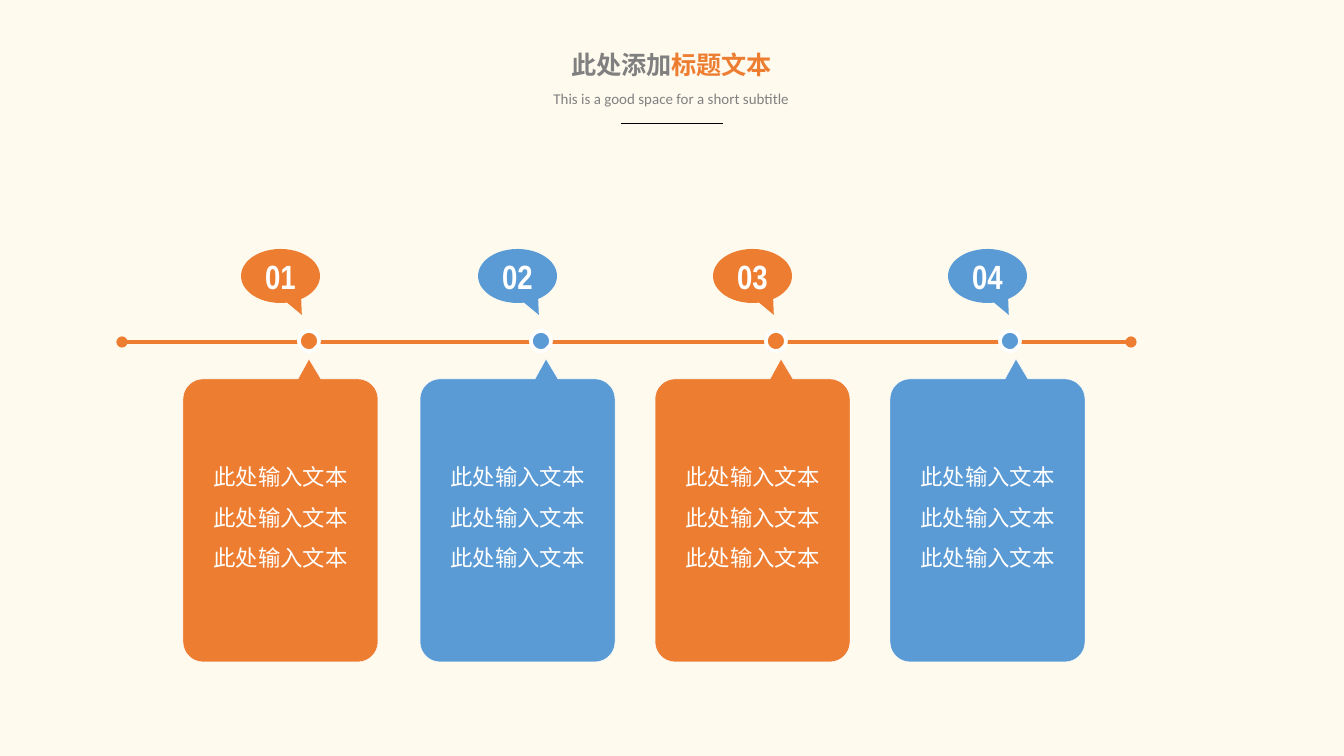
from lxml.etree import SubElement
from pptx import Presentation
from pptx.dml.color import RGBColor
from pptx.enum.shapes import MSO_CONNECTOR as CONN, MSO_SHAPE as SHAPE
from pptx.enum.text import MSO_ANCHOR as ANCHOR, MSO_AUTO_SIZE as AUTO, PP_ALIGN as ALIGN
from pptx.oxml.ns import qn
from pptx.util import Pt

PX = 914400 / 134.4
COLORS = {k: RGBColor.from_string(v) for k, v in {
    "cream": "FEFAEE", "orange": "ED7D31", "blue": "5B9BD5",
    "gray": "808080", "white": "FFFFFF", "black": "000000"}.items()}
CJK = "Noto Sans CJK SC"


def px(*values):
    return [round(v * PX) for v in values]


def add_run(p, text, size, font, color, bold=False):
    p.alignment = ALIGN.CENTER
    r = p.add_run()
    r.text = text
    r.font.size, r.font.name, r.font.bold = Pt(size), font, bold
    r.font.color.rgb = COLORS[color]
    SubElement(r.font._element, qn("a:ea"), typeface=CJK)


prs = Presentation()
prs.slide_width, prs.slide_height = px(1344, 756)
s = prs.slides.add_slide(prs.slide_layouts[5])
s.background.fill.solid()
s.background.fill.fore_color.rgb = COLORS["cream"]

# Title and subtitle
title = s.shapes.title
title.left, title.top, title.width, title.height = px(556, 43, 231, 44)
subtitle = s.shapes.add_textbox(*px(539, 83, 265, 32))
for sp in (title, subtitle):
    tf = sp.text_frame
    tf.word_wrap = False
    tf.auto_size = AUTO.NONE
    tf.vertical_anchor = ANCHOR.TOP
p = title.text_frame.paragraphs[0]
add_run(p, "此处添加", 13.5, "Calibri", "gray", True)
add_run(p, "标题文本", 13.5, "Calibri", "orange", True)
add_run(subtitle.text_frame.paragraphs[0],
        "This is a good space for a short subtitle", 8, "Calibri", "gray")

# Title rule and timeline
for x1, x2, y, color, width, ends in [
        (621, 723, 124, "black", 0.5, ()),
        (122, 1131, 342, "orange", 2, ("a:headEnd", "a:tailEnd"))]:
    line = s.shapes.add_connector(CONN.STRAIGHT, *px(x1, y, x2, y))
    line.line.color.rgb = COLORS[color]
    line.line.width = Pt(width)
    ln = line.line._get_or_add_ln()
    for end in ends:
        SubElement(ln, qn(end), type="oval")
    SubElement(line._element.spPr, qn("a:effectLst"))

# Milestones: dot, numbered callout and card
TOP, BOTTOM, CARD_W, RADIUS = 379, 662, 195, 20
milestones = [(183, 309, "orange"), (420, 541, "blue"),
              (655, 776, "orange"), (890, 1010, "blue")]
for n, (left, dot_x, color) in enumerate(milestones, 1):
    group = s.shapes.add_group_shape().shapes
    dot = group.add_shape(SHAPE.OVAL, *px(dot_x - 10, 331, 20, 20))
    callout = group.add_shape(SHAPE.OVAL_CALLOUT, *px(left + 58, 249, 79, 54))
    callout.adjustments[0], callout.adjustments[1] = 0.27, 0.72

    # Card outline: pointer on top, then clockwise round the corners
    right = left + CARD_W
    points = [(left + 138, TOP),
              (right - RADIUS, TOP), (right, TOP + RADIUS),
              (right, BOTTOM - RADIUS), (right - RADIUS, BOTTOM),
              (left + RADIUS, BOTTOM), (left, BOTTOM - RADIUS),
              (left, TOP + RADIUS), (left + RADIUS, TOP),
              (left + 115, TOP), (left + 126, 359)]
    outline = group.build_freeform(*px(left + 126, 359))
    outline.add_line_segments([px(*pt) for pt in points], close=True)
    card = outline.convert_to_shape()

    # Every second side, from the third step on, is a rounded corner
    steps = list(card._element.iter(qn("a:moveTo"), qn("a:lnTo")))
    ends = [(int(pt.get("x")), int(pt.get("y"))) for step in steps for pt in step]
    for i in (3, 5, 7, 9):
        (x1, y1), (x2, y2) = ends[i - 1], ends[i]
        cx, cy = (x2, y1) if i in (3, 7) else (x1, y2)
        steps[i].tag = qn("a:cubicBezTo")
        for k, (x, y) in enumerate([(x1, y1), (x2, y2)]):
            pt = steps[i].makeelement(qn("a:pt"), {
                "x": str(round(x + 0.55 * (cx - x))),
                "y": str(round(y + 0.55 * (cy - y)))})
            steps[i].insert(k, pt)

    for sp, width in ((dot, 2), (callout, 0), (card, 0.25)):
        sp.shadow.inherit = False
        sp.fill.solid()
        sp.fill.fore_color.rgb = COLORS[color]
        if width:
            sp.line.color.rgb = COLORS["white"]
            sp.line.width = Pt(width)
        else:
            sp.line.fill.background()
        sp.text_frame.vertical_anchor = ANCHOR.MIDDLE

    tf = callout.text_frame
    tf.margin_left = tf.margin_right = tf.margin_top = tf.margin_bottom = 0
    add_run(tf.paragraphs[0], f"{n:02d}", 18, "Arial Narrow", "white", True)

    tf = card.text_frame
    tf.word_wrap = True
    for i in range(3):
        p = tf.add_paragraph() if i else tf.paragraphs[0]
        p.line_spacing = 1.5
        add_run(p, "此处输入文本", 12, CJK, "white")

prs.save("out.pptx")
